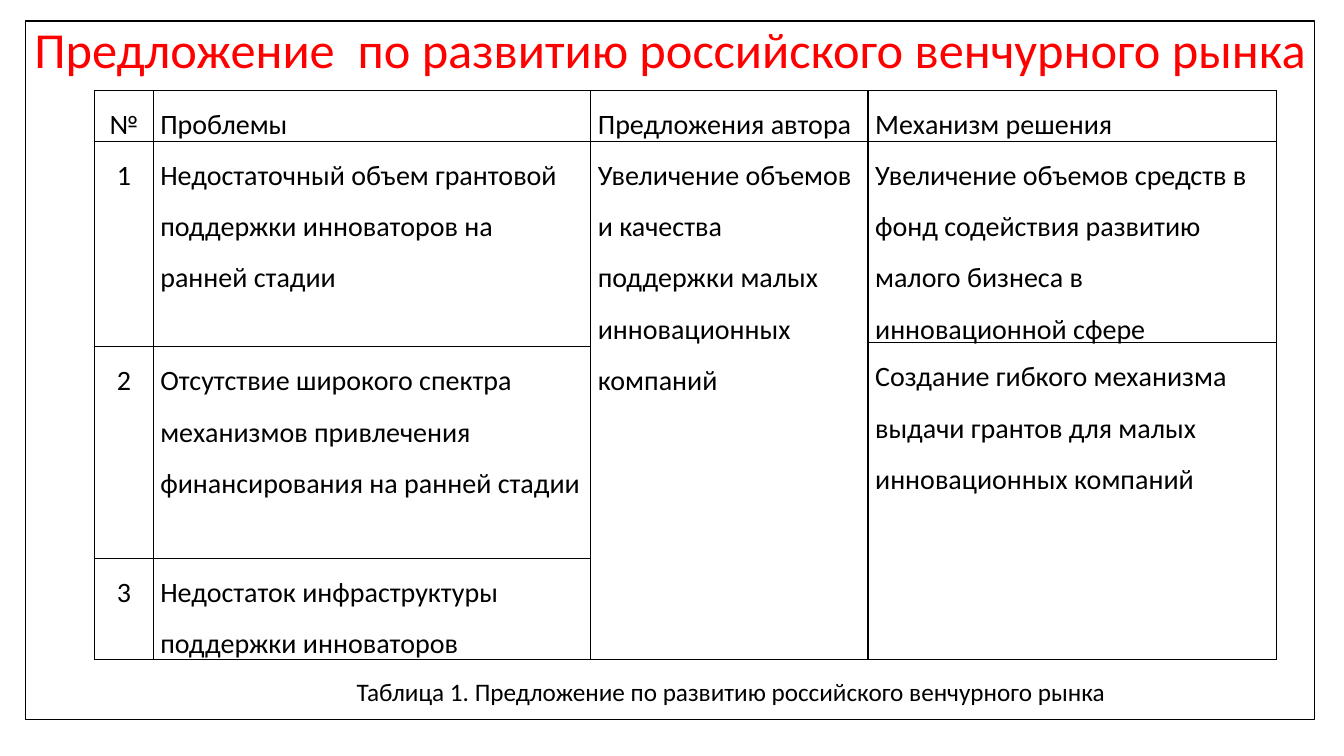
from dataclasses import dataclass

import lxml.etree
import pptx
import pptx.dml.color
import pptx.enum.shapes
import pptx.enum.text
import pptx.oxml.ns
import pptx.table
import pptx.text.text
import pptx.util
from pptx.util import Inches

COLORS = {"title": "FF0000", "ink": "000000"}
FONT = "Calibri"
ALIGN = pptx.enum.text.PP_ALIGN


@dataclass(frozen=True)
class Entry:
    row: int
    column: int
    text: str
    row_span: int = 1


COLUMN_WIDTHS = (0.58, 4.34, 2.75, 4.05)
ROW_HEIGHTS = (0.39, 1.67, 0.04, 2.1, 0.81)
ENTRIES = (
    Entry(0, 0, "№"),
    Entry(0, 1, "Проблемы"),
    Entry(0, 2, "Предложения автора"),
    Entry(0, 3, "Механизм решения"),
    Entry(1, 0, "1", 2),
    Entry(1, 1, "Недостаточный объем грантовой поддержки инноваторов на ранней стадии", 2),
    Entry(1, 2, "Увеличение объемов и качества поддержки малых инновационных компаний", 4),
    Entry(1, 3, "Увеличение объемов средств в фонд содействия развитию малого бизнеса "
                "в инновационной сфере"),
    Entry(2, 3, "Создание гибкого механизма выдачи грантов для малых инновационных компаний", 3),
    Entry(3, 0, "2"),
    Entry(3, 1, "Отсутствие широкого спектра механизмов привлечения финансирования "
                "на ранней стадии"),
    Entry(4, 0, "3"),
    Entry(4, 1, "Недостаток инфраструктуры поддержки инноваторов"),
)


def write(frame: pptx.text.text.TextFrame, text: str, size: int, color: str,
          align: ALIGN, spacing: float) -> None:
    frame.text = text
    paragraph = frame.paragraphs[0]
    paragraph.alignment = align
    paragraph.line_spacing = spacing
    font = paragraph.runs[0].font
    font.name = FONT
    font.size = pptx.util.Pt(size)
    font.color.rgb = pptx.dml.color.RGBColor.from_string(COLORS[color])


def style_cell(cell: pptx.table._Cell) -> None:
    """Clear the fill, tighten the margins and rule all four sides."""
    cell.margin_left = cell.margin_right = Inches(0.07)
    cell.margin_top = cell.margin_bottom = 0
    cell.fill.background()
    qn = pptx.oxml.ns.qn
    properties = cell._tc.get_or_add_tcPr()
    for index, side in enumerate(("lnL", "lnR", "lnT", "lnB")):
        border = lxml.etree.Element(qn(f"a:{side}"), w=str(int(pptx.util.Pt(1))))
        fill = lxml.etree.SubElement(border, qn("a:solidFill"))
        lxml.etree.SubElement(fill, qn("a:srgbClr"), val=COLORS["ink"])
        properties.insert(index, border)


def main() -> None:
    deck = pptx.Presentation()
    deck.slide_width, deck.slide_height = Inches(13.33), Inches(7.5)
    slide = deck.slides.add_slide(deck.slide_layouts[5])

    # Title
    title = slide.shapes.title
    title.left, title.top = Inches(0.17), Inches(-0.41)
    title.width, title.height = Inches(12.96), Inches(1.86)
    title.text_frame.auto_size = pptx.enum.text.MSO_AUTO_SIZE.NONE
    title.text_frame.vertical_anchor = pptx.enum.text.MSO_ANCHOR.MIDDLE
    write(title.text_frame, "Предложение  по развитию российского венчурного рынка",
          36, "title", ALIGN.CENTER, 0.9)

    # Table caption
    caption = slide.shapes.add_textbox(Inches(0.94), Inches(6.69), Inches(12.62), Inches(1.17))
    caption.text_frame.word_wrap = True
    write(caption.text_frame, "Таблица 1. Предложение по развитию российского венчурного рынка",
          18, "ink", ALIGN.CENTER, 0.9)

    # Frame around the slide
    border = slide.shapes.add_shape(pptx.enum.shapes.MSO_SHAPE.RECTANGLE, Inches(0.25),
                                    Inches(0.21), Inches(12.79), Inches(6.93))
    border.shadow.inherit = False
    border.fill.background()
    border.line.color.rgb = pptx.dml.color.RGBColor.from_string(COLORS["ink"])
    border.line.width = pptx.util.Pt(1)

    # Table of problems and proposals
    holder = slide.shapes.add_table(len(ROW_HEIGHTS), len(COLUMN_WIDTHS), Inches(0.94),
                                    Inches(0.9), Inches(11.71), Inches(5.65))
    proposals = holder.table
    proposals.first_row = proposals.horz_banding = False
    for column, width in zip(proposals.columns, COLUMN_WIDTHS):
        column.width = Inches(width)
    for row, height in zip(proposals.rows, ROW_HEIGHTS):
        row.height = Inches(height)
    holder.height = Inches(5.65)
    for cell in proposals.iter_cells():
        style_cell(cell)
    for entry in ENTRIES:
        cell = proposals.cell(entry.row, entry.column)
        if entry.row_span > 1:
            cell.merge(proposals.cell(entry.row + entry.row_span - 1, entry.column))
        align = ALIGN.LEFT if entry.column else ALIGN.CENTER
        write(cell.text_frame, entry.text, 20, "ink", align, 1.5)

    deck.save("out.pptx")


if __name__ == "__main__":
    main()
